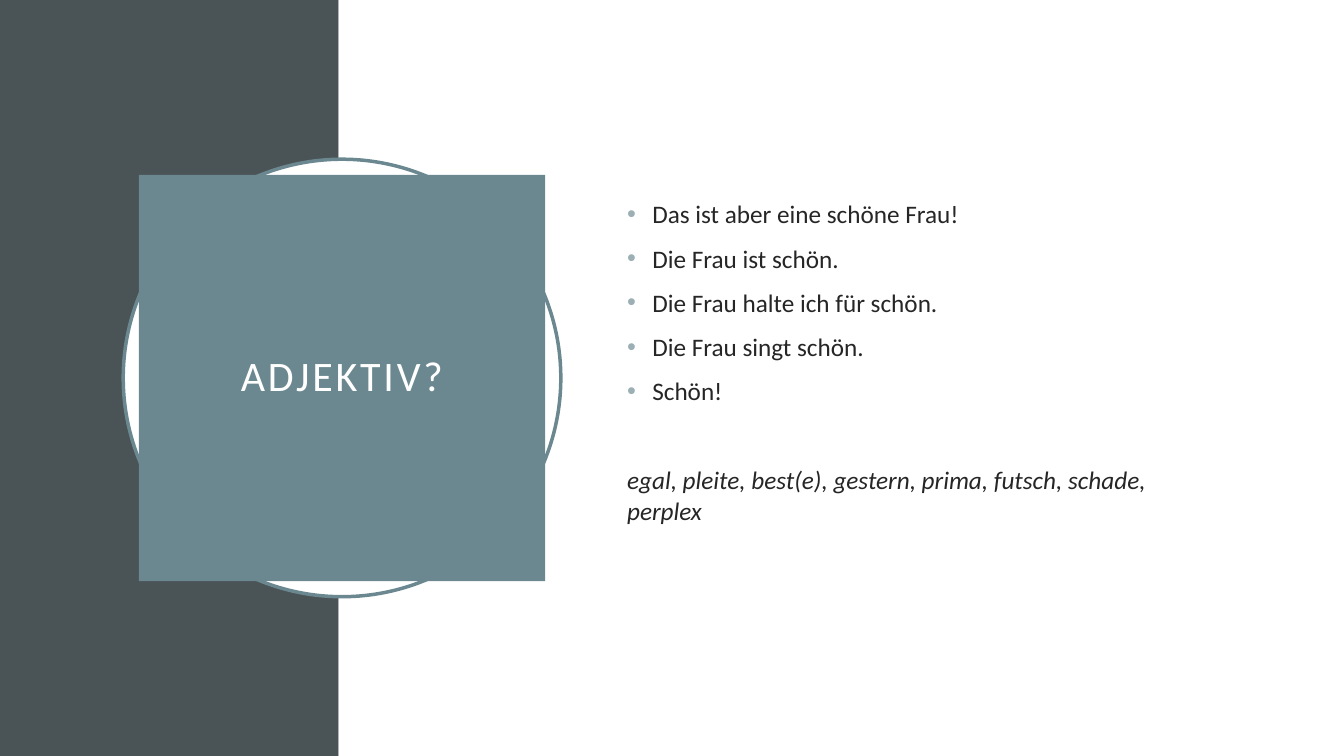
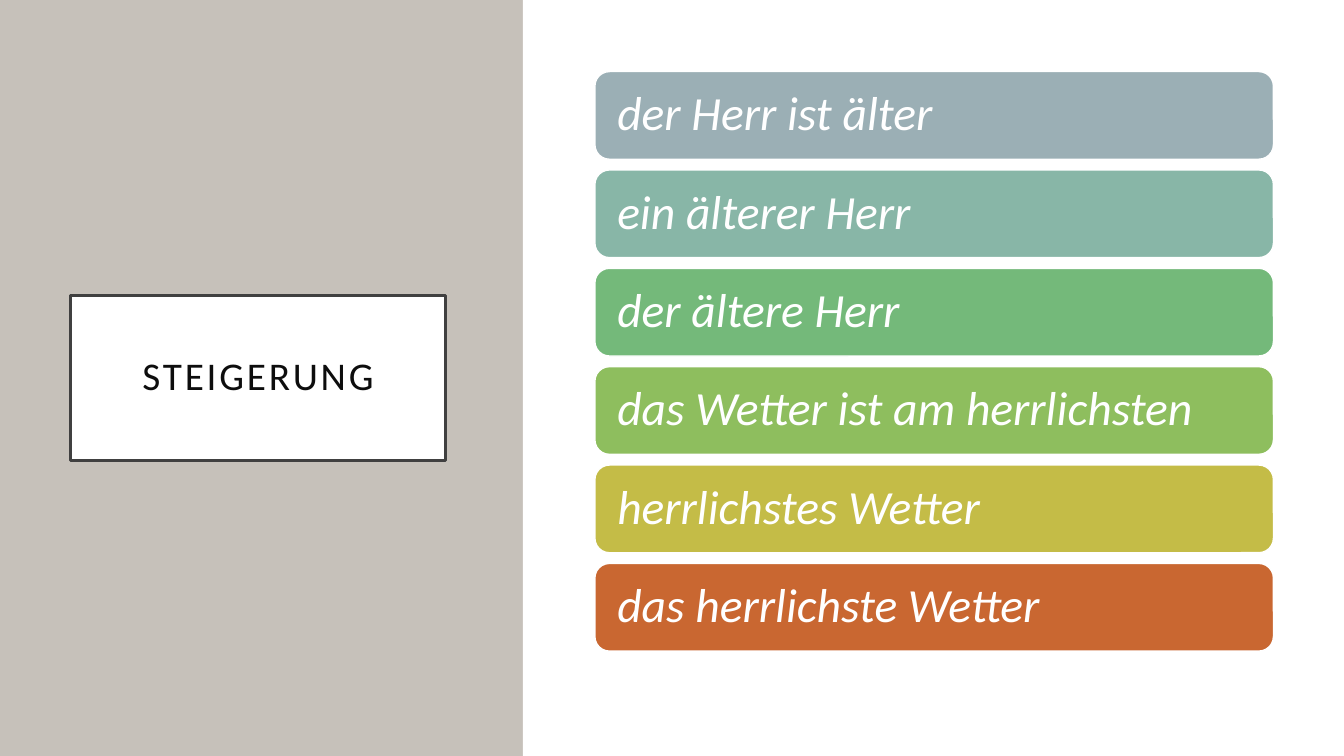
from lxml import etree
from pptx import Presentation
from pptx import util as u
from pptx.dml.color import RGBColor
from pptx.enum import shapes, text
from pptx.oxml.ns import qn

W, H = u.Inches(13.33), u.Inches(7.5)
FONT = "Calibri"
WHITE = RGBColor(0xFF, 0xFF, 0xFF)
SLATE = RGBColor(0x4A, 0x53, 0x56)
TEAL = RGBColor(0x6B, 0x88, 0x91)
STONE = RGBColor(0xC6, 0xC1, 0xBA)
FRAME = RGBColor(0x40, 0x40, 0x40)
INK = RGBColor(0x26, 0x26, 0x26)
TITLE_INK = RGBColor(0x0D, 0x0D, 0x0D)
MIST = RGBColor(0x9B, 0xAF, 0xB5)
SAGE = RGBColor(0x88, 0xB6, 0xA7)
GREEN = RGBColor(0x74, 0xB9, 0x7A)
LIME = RGBColor(0x8E, 0xBE, 0x5E)
MUSTARD = RGBColor(0xC4, 0xBC, 0x47)
RUST = RGBColor(0xC9, 0x67, 0x31)

SENTENCES = ["Das ist aber eine schöne Frau!", "Die Frau ist schön.",
             "Die Frau halte ich für schön.", "Die Frau singt schön.", "Schön!"]
WORDS = "egal, pleite, best(e), gestern, prima, futsch, schade, perplex"
FORMS = [("der Herr ist älter", MIST), ("ein älterer Herr", SAGE),
         ("der ältere Herr", GREEN), ("das Wetter ist am herrlichsten", LIME),
         ("herrlichstes Wetter", MUSTARD), ("das herrlichste Wetter", RUST)]


def box(left, top, width, height):
    """Percentages of the slide's size as left, top, width, height."""
    return (int(W * left / 100), int(H * top / 100),
            int(W * width / 100), int(H * height / 100))


def square(center_x, side):
    """A square in mid-height; its side is a percentage of the slide's height."""
    length = int(H * side / 100)
    return int(W * center_x / 100) - length // 2, (H - length) // 2, length, length


def paint(sp, fill, line=None, width=0):
    sp.fill.solid()
    sp.fill.fore_color.rgb = fill
    if line is None:
        sp.line.fill.background()
    else:
        sp.line.color.rgb = line
        sp.line.width = u.Pt(width)


def add_shape(s, kind, area, fill, line=None, width=0):
    sp = s.shapes.add_shape(kind, *area)
    sp.shadow.inherit = False
    paint(sp, fill, line, width)
    return sp


def format_runs(p, size, color, italic=False):
    for r in p.runs:
        r.font.name = FONT
        r.font.size = u.Pt(size)
        r.font.color.rgb = color
        r.font.italic = italic


def set_frame(sp, inset_x, inset_y):
    tf = sp.text_frame
    tf.word_wrap = True
    tf.auto_size = text.MSO_AUTO_SIZE.NONE
    tf.vertical_anchor = text.MSO_ANCHOR.MIDDLE
    tf.margin_left = tf.margin_right = u.Inches(inset_x)
    tf.margin_top = tf.margin_bottom = u.Inches(inset_y)
    return tf


def place(sp, area):
    sp.left, sp.top, sp.width, sp.height = area


def add_bands(s, edge, color):
    """Coloured band on the left, white panel on the right."""
    for left, width, fill in [(0, edge, color), (edge, 100 - edge, WHITE)]:
        add_shape(s, shapes.MSO_SHAPE.RECTANGLE, box(left, 0, width, 100), fill)


def set_title(s, words, area, size, color):
    """Spaced, centred title, brought in front of the shapes drawn so far."""
    sp = s.shapes.title
    place(sp, area)
    sp.element.getparent().append(sp.element)
    tf = set_frame(sp, 0.2, 0.2)
    tf.text = words
    p = tf.paragraphs[0]
    p.alignment = text.PP_ALIGN.CENTER
    p.line_spacing = 0.9
    format_runs(p, size, color)
    for r in p.runs:
        r.font._element.set("spc", "200")
    return sp


def set_bullet(p, color=None):
    """Bullet in the given colour, or none without a colour."""
    pPr = p._p.get_or_add_pPr()
    indent = u.Inches(0.25) if color is not None else 0
    pPr.set("marL", str(indent))
    pPr.set("indent", str(-indent))
    if color is None:
        etree.SubElement(pPr, qn("a:buNone"))
        return
    bu_color = etree.SubElement(pPr, qn("a:buClr"))
    etree.SubElement(bu_color, qn("a:srgbClr"), val=str(color))
    etree.SubElement(pPr, qn("a:buFont"), typeface="Arial")
    etree.SubElement(pPr, qn("a:buChar"), char="•")


def set_body(s, area, items, closing):
    """Bulleted list with an italic closing line set apart."""
    sp = s.placeholders[1]
    place(sp, area)
    tf = set_frame(sp, 0.1, 0.05)
    tf.text = "\n".join(items + [closing])
    for i, p in enumerate(tf.paragraphs):
        last = i == len(items)
        set_bullet(p, None if last else MIST)
        p.space_before = u.Pt(42 if last else 10 if i else 0)
        format_runs(p, 18, INK, italic=last)


def add_bars(s, forms, left, top, width, bottom, height):
    """Rounded bars spread evenly between top and bottom."""
    pitch = (bottom - top - height) / (len(forms) - 1)
    for i, (words, color) in enumerate(forms):
        sp = add_shape(s, shapes.MSO_SHAPE.ROUNDED_RECTANGLE,
                       box(left, top + i * pitch, width, height), color, WHITE, 1)
        tf = set_frame(sp, 0.18, 0.14)
        tf.text = words
        p = tf.paragraphs[0]
        p.alignment = text.PP_ALIGN.LEFT
        p.line_spacing = 0.9
        format_runs(p, 34, WHITE, italic=True)


def build_adjective(prs):
    s = prs.slides.add_slide(prs.slide_layouts[1])
    add_bands(s, 25.2, SLATE)
    add_shape(s, shapes.MSO_SHAPE.OVAL, square(25.45, 57.87), WHITE, TEAL, 2.5)
    title = set_title(s, "ADJEKTIV?", square(25.45, 53.73), 30, WHITE)
    paint(title, TEAL)
    set_body(s, box(45.91, 20.4, 43.66, 54.93), SENTENCES, WORDS)
    # the list lies in front of the white panel
    body = s.placeholders[1].element
    body.getparent().append(body)


def build_comparison(prs):
    s = prs.slides.add_slide(prs.slide_layouts[5])
    add_bands(s, 38.9, STONE)
    title = set_title(s, "STEIGERUNG", box(5.25, 39.07, 27.91, 21.87), 28, TITLE_INK)
    paint(title, WHITE, FRAME, 2.5)
    add_bars(s, FORMS, left=44.26, top=9.47, width=50.49, bottom=86.13, height=11.6)


def main():
    prs = Presentation()
    prs.slide_width, prs.slide_height = W, H
    build_adjective(prs)
    build_comparison(prs)
    prs.save("out.pptx")


if __name__ == "__main__":
    main()
